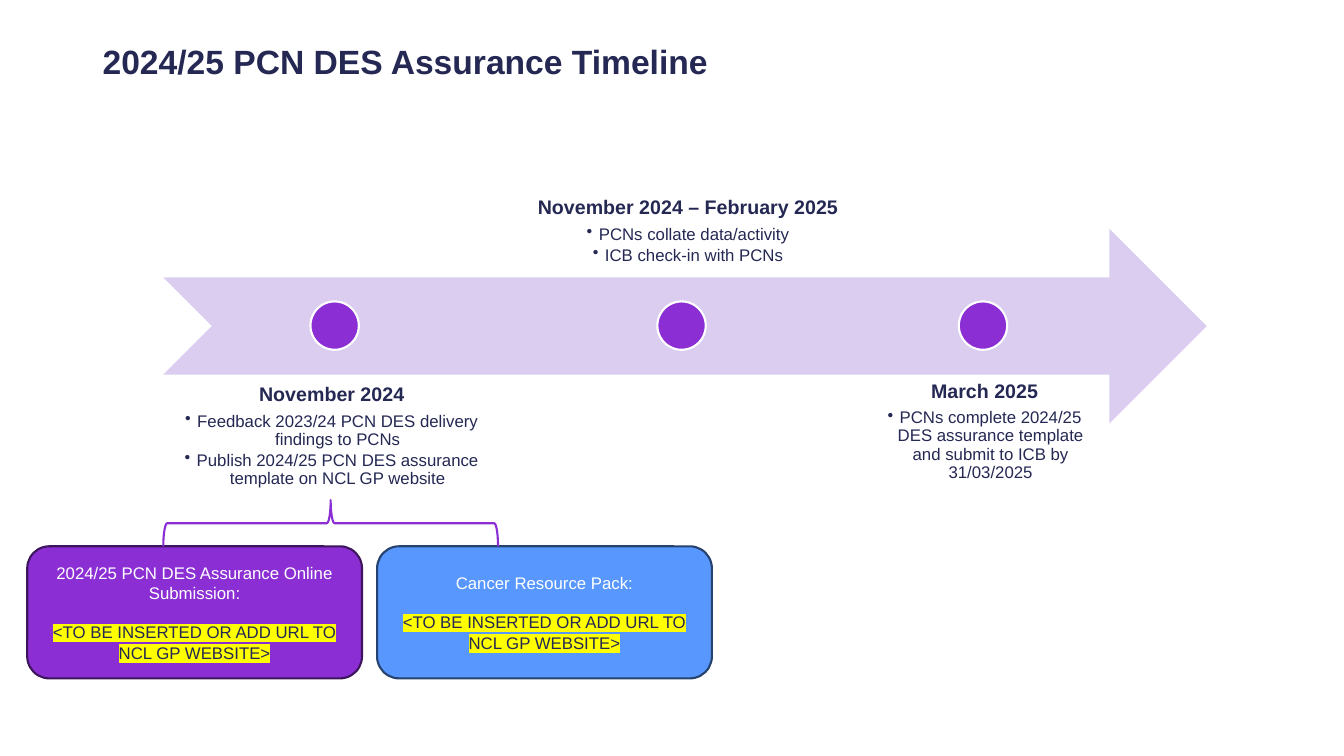
from lxml import etree
from pptx import Presentation
from pptx import util as u
from pptx.dml.color import RGBColor
from pptx.enum import shapes, text
from pptx.oxml.ns import qn

W, H = u.Inches(13.33), u.Inches(7.5)
COL, ROW = W / 100, H / 100
FONT = "Arial"
COLORS = {
    "ink": "242853",
    "white": "FFFFFF",
    "arrow": "DACDEF",
    "purple": "8B2FD4",
    "purple_edge": "3D155D",
    "blue": "5797FE",
    "blue_edge": "26426F",
    "highlight": "FFFF00",
}
MILESTONES = [
    ((12.15, 40.27, 25.06, 25.73), 24.9, text.MSO_ANCHOR.BOTTOM, "November 2024",
     ["Feedback 2023/24 PCN DES delivery findings to PCNs",
      "Publish 2024/25 PCN DES assurance template on NCL GP website"]),
    ((38.78, 24.67, 24.83, 25.73), 50.71, text.MSO_ANCHOR.TOP, "November 2024 – February 2025",
     ["PCNs collate data/activity", "ICB check-in with PCNs"]),
    ((64.22, 39.47, 18.08, 25.73), 73.14, text.MSO_ANCHOR.BOTTOM, "March 2025",
     ["PCNs complete 2024/25 DES assurance template and submit to ICB by 31/03/2025"]),
]
CARDS = [
    ("2024/25 PCN DES Assurance Online Submission:", "purple", "purple_edge"),
    ("Cancer Resource Pack:", "blue", "blue_edge"),
]
PLACEHOLDER = "<TO BE INSERTED OR ADD URL TO NCL GP WEBSITE>"
MST = shapes.MSO_SHAPE


def rgb(name):
    return RGBColor.from_string(COLORS[name])


def place(box):
    x, y, w, h = box
    return [u.Emu(round(v)) for v in (x * COL, y * ROW, w * COL, h * ROW)]


def add_shape(s, kind, box, fill=None, line=None):
    sp = s.shapes.add_shape(kind, *place(box))
    sp.shadow.inherit = False
    if fill:
        sp.fill.solid()
        sp.fill.fore_color.rgb = rgb(fill)
    else:
        sp.fill.background()
    if line:
        sp.line.color.rgb = rgb(line)
        sp.line.width = u.Pt(1.5)
    else:
        sp.line.fill.background()
    return sp


def add_textbox(s, box, anchor, inset=0.1):
    tf = s.shapes.add_textbox(*place(box)).text_frame
    tf.word_wrap = True
    tf.vertical_anchor = anchor
    tf.margin_left = tf.margin_right = u.Inches(inset)
    tf.margin_top = tf.margin_bottom = u.Inches(inset if inset > 0.1 else 0.05)
    return tf


def style(p, size, color="ink", bold=False):
    for r in p.runs:
        r.font.name = FONT
        r.font.size = u.Pt(size)
        r.font.bold = bold
        r.font.color.rgb = rgb(color)


def add_bullet(p):
    pPr = p._p.get_or_add_pPr()
    pPr.set("marL", str(u.Inches(0.12)))
    pPr.set("indent", str(u.Inches(-0.12)))
    etree.SubElement(pPr, qn("a:buChar")).set("char", "•")


def highlight(p, color):
    for r in p.runs:
        mark = etree.Element(qn("a:highlight"))
        etree.SubElement(mark, qn("a:srgbClr")).set("val", COLORS[color])
        r._r.rPr.find(qn("a:solidFill")).addnext(mark)


def add_title(s, title):
    tf = add_textbox(s, (6.9, 5.33, 61.67, 19.33), text.MSO_ANCHOR.TOP)
    p = tf.paragraphs[0]
    p.text = title
    p.line_spacing = 0.9
    style(p, 24, bold=True)


def add_milestone(s, box, center, anchor, heading, bullets):
    tf = add_textbox(s, box, anchor, 0.11)
    tf.text = "\n".join([heading, *bullets])
    for i, p in enumerate(tf.paragraphs):
        p.alignment = text.PP_ALIGN.CENTER
        p.line_spacing = 0.9
        p.space_after = u.Pt(2 if i else 5)
        if i:
            p.level = 1
            add_bullet(p)
        style(p, 12 if i else 14, bold=not i)
    add_shape(s, MST.OVAL, (center - 1.8, 39.87, 3.6, 6.4), "purple", "white")


def add_card(s, box, label, fill, line):
    tf = add_shape(s, MST.ROUNDED_RECTANGLE, box, fill, line).text_frame
    tf.word_wrap = True
    tf.vertical_anchor = text.MSO_ANCHOR.MIDDLE
    tf.text = f"{label}\n{PLACEHOLDER}"
    head, link = tf.paragraphs
    for p in (head, link):
        p.alignment = text.PP_ALIGN.CENTER
    style(head, 12, "white")
    style(link, 12)
    link.space_before = u.Pt(14)
    highlight(link, "highlight")


def main():
    prs = Presentation()
    prs.slide_width, prs.slide_height = W, H
    s = prs.slides.add_slide(prs.slide_layouts[6])
    add_title(s, "2024/25 PCN DES Assurance Timeline")
    add_shape(s, MST.NOTCHED_RIGHT_ARROW, (12.15, 30.27, 77.64, 25.73), "arrow")
    for milestone in MILESTONES:
        add_milestone(s, *milestone)
    for i, card in enumerate(CARDS):
        add_card(s, (2.03 + 26.03 * i, 72.27, 24.91, 17.47), *card)
    brace = add_shape(s, MST.RIGHT_BRACE, (22.88, 47.07, 3.45, 44.27), line="purple")
    brace.rotation = 270
    prs.save("out.pptx")


if __name__ == "__main__":
    main()
